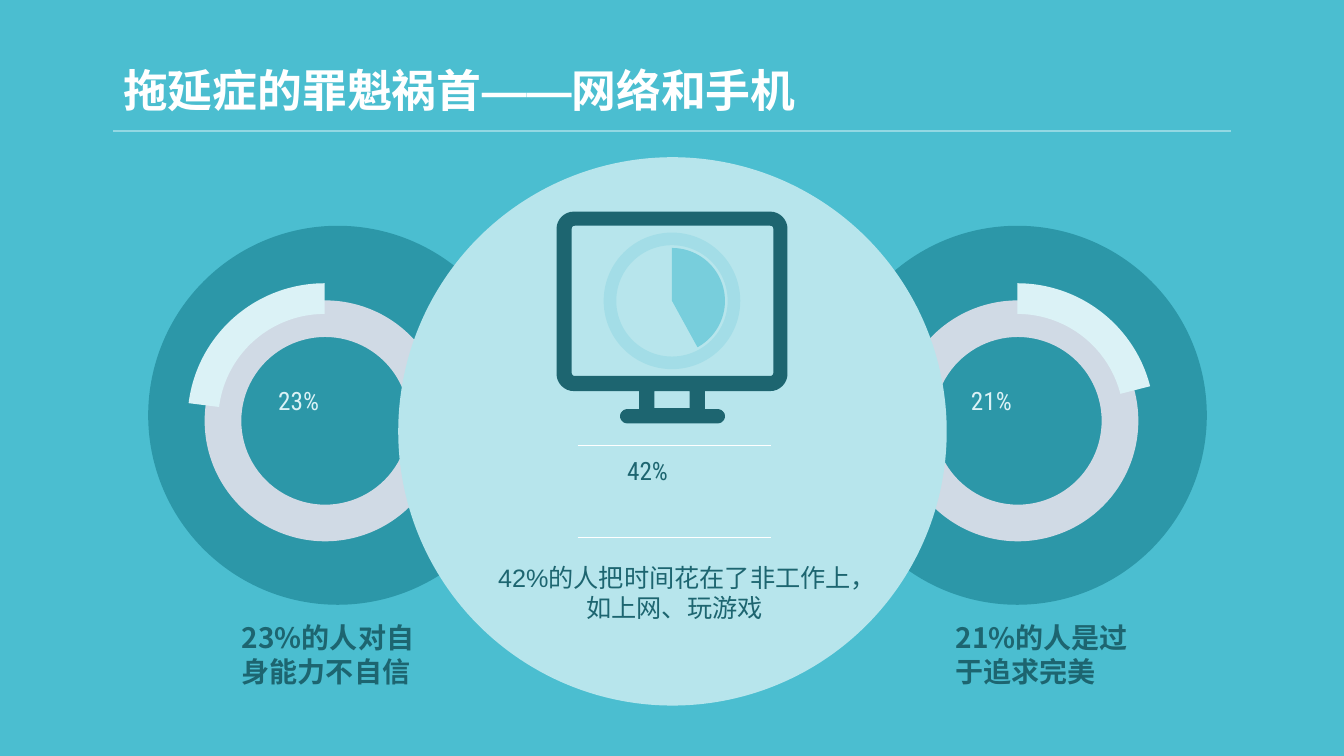
"""Build the slide on procrastination and its main causes."""
import math
from dataclasses import dataclass
from typing import Any

from lxml import etree
from pptx import Presentation
from pptx import util as u
from pptx.dml.color import RGBColor
from pptx.enum import shapes, text
from pptx.oxml.ns import qn

Kind = shapes.MSO_SHAPE
Align = text.PP_ALIGN
UNITS = 1000


@dataclass(frozen=True)
class Theme:
    back: str = "4BBED0"
    disc: str = "2C97A8"
    ring: str = "D0DAE5"
    arc: str = "DBF2F6"
    centre: str = "B7E5EC"
    dark: str = "1D6570"
    pie: str = "78CEDC"
    rule: str = "93D8E3"
    white: str = "FFFFFF"
    body_font: str = "Arial"
    number_font: str = "Roboto Condensed"
    caption_font: str = "Noto Sans CJK SC"
    title_size: int = 32
    caption_size: int = 20
    body_size: int = 18


@dataclass(frozen=True)
class Box:
    left: float
    top: float
    width: float
    height: float

    def emu(self) -> tuple[u.Length, ...]:
        return tuple(map(u.Inches, (self.left, self.top, self.width, self.height)))


@dataclass(frozen=True)
class Style:
    font: str
    size: int
    color: str
    bold: bool = False
    align: Any = Align.LEFT
    inset: float | None = None
    wrap: bool = True


@dataclass(frozen=True)
class Side:
    disc_left: float
    arc_left: float
    caption_left: float
    share: float
    caption: str
    flip: bool


@dataclass(frozen=True)
class Rule:
    left: float
    right: float
    y: float
    color: str


@dataclass(frozen=True)
class Corner:
    x: float
    y: float
    radius: float = 0


T = Theme()
TITLE = Style(T.body_font, T.title_size, T.white, bold=True)
BODY = Style(T.body_font, T.body_size, T.dark, align=Align.CENTER)
CAPTION = Style(T.caption_font, T.caption_size, T.dark, bold=True)
SIDE_NUMBER = Style(T.number_font, T.body_size, T.arc, inset=0, wrap=False)
CENTRE_NUMBER = Style(T.number_font, T.body_size, T.dark, inset=0, wrap=False)

SIDES = (
    Side(1.47, 1.86, 2.3, 0.23, "23%的人对自身能力不自信", True),
    Side(8.21, 8.73, 9.38, 0.21, "21%的人是过于追求完美", False),
)
RULES = (
    Rule(5.73, 7.65, 5.33, T.white),
    Rule(5.73, 7.65, 4.42, T.white),
    Rule(1.12, 12.21, 1.3, T.rule),
)
CENTRE_SHARE = 0.42
MONITOR = (
    Corner(5.52, 2.1, 0.17), Corner(7.81, 2.1, 0.17), Corner(7.81, 3.88, 0.17),
    Corner(6.99, 3.88), Corner(6.99, 4.06),
    Corner(7.19, 4.06, 0.07), Corner(7.19, 4.2, 0.07),
    Corner(6.15, 4.2, 0.07), Corner(6.15, 4.06, 0.07),
    Corner(6.34, 4.06), Corner(6.34, 3.88), Corner(5.52, 3.88, 0.17),
)
SCREEN = (Corner(5.67, 2.24, 0.03), Corner(5.67, 3.73, 0.03),
          Corner(7.67, 3.73, 0.03), Corner(7.67, 2.24, 0.03))
STAND_GAP = (Corner(6.49, 3.88), Corner(6.49, 4.05), Corner(6.84, 4.05), Corner(6.84, 3.88))


def share_angles(share: float) -> tuple[float, float]:
    """Give the clockwise start at the top and the end, as adjustments."""
    return 162, (162 + 216 * share) % 216


def paint(sp: Any, color: str) -> None:
    """Fill a shape plainly, with no outline or shadow."""
    sp.shadow.inherit = False
    sp.fill.solid()
    sp.fill.fore_color.rgb = RGBColor.from_string(color)
    sp.line.fill.background()


def add_shape(s: Any, kind: Any, box: Box, color: str,
              adjustments: tuple[float, ...] = (), flip: bool = False) -> Any:
    """Draw one preset shape."""
    sp = s.shapes.add_shape(kind, *box.emu())
    for i, value in enumerate(adjustments):
        sp.adjustments[i] = value
    if flip:
        sp._element.spPr.find(qn("a:xfrm")).set("flipH", "1")
    paint(sp, color)
    return sp


def set_text(sp: Any, words: str, style: Style) -> None:
    """Write one paragraph in a style."""
    tf = sp.text_frame
    frame = {"word_wrap": style.wrap, "auto_size": text.MSO_AUTO_SIZE.NONE,
             "vertical_anchor": text.MSO_ANCHOR.TOP}
    if style.inset is not None:
        frame |= {f"margin_{edge}": u.Inches(style.inset)
                  for edge in ("left", "top", "right", "bottom")}
    p = tf.paragraphs[0]
    r = p.add_run()
    r.text = words
    font = {"name": style.font, "size": u.Pt(style.size), "bold": style.bold}
    paragraph = {"alignment": style.align, "space_before": u.Pt(0)}
    for target, values in ((tf, frame), (p, paragraph), (r.font, font)):
        for name, value in values.items():
            setattr(target, name, value)
    r.font.color.rgb = RGBColor.from_string(style.color)
    latin = r._r.rPr.find(qn("a:latin"))
    east = etree.Element(qn("a:ea"), typeface=style.font)
    latin.addnext(east)


def add_text(s: Any, box: Box, words: str, style: Style) -> None:
    """Place a text box."""
    set_text(s.shapes.add_textbox(*box.emu()), words, style)


def add_rule(s: Any, rule: Rule) -> None:
    """Draw a thin horizontal line."""
    y = u.Inches(rule.y)
    line = s.shapes.add_connector(shapes.MSO_CONNECTOR.STRAIGHT,
                                  u.Inches(rule.left), y, u.Inches(rule.right), y)
    line.line.width = u.Pt(1)
    line.line.color.rgb = RGBColor.from_string(rule.color)
    etree.SubElement(line._element.spPr, qn("a:effectLst"))


def add_side(s: Any, side: Side) -> None:
    """Draw a disc with its ring, share arc, percentage and caption."""
    left = side.arc_left
    add_shape(s, Kind.OVAL, Box(side.disc_left, 2.24, 3.76, 3.76), T.disc)
    add_shape(s, Kind.DONUT, Box(left + 0.17, 2.98, 2.39, 2.39), T.ring, (0.152,), side.flip)
    add_shape(s, Kind.BLOCK_ARC, Box(left, 2.81, 2.72, 2.72), T.arc,
              (*share_angles(side.share), 0.112), side.flip)
    add_text(s, Box(left + 0.9, 3.82, 0.93, 0.7), f"{side.share:.0%}", SIDE_NUMBER)
    add_text(s, Box(side.caption_left, 6.11, 2.11, 0.77), side.caption, CAPTION)


def outline(corners: tuple[Corner, ...], steps: int = 8) -> list[tuple[float, float]]:
    """Trace right-angled corners, rounding each by its radius."""
    points = []
    for i, c in enumerate(corners):
        before, after = corners[i - 1], corners[(i + 1) % len(corners)]
        count = steps if c.radius else 0
        for k in range(count + 1):
            turn = math.pi / 2 * k / steps
            x, y = c.x, c.y
            for other, pull in ((before, 1 - math.sin(turn)), (after, 1 - math.cos(turn))):
                reach = c.radius * pull / math.dist((c.x, c.y), (other.x, other.y))
                x += (other.x - c.x) * reach
                y += (other.y - c.y) * reach
            points.append((x * UNITS, y * UNITS))
    return points


def add_monitor(s: Any) -> None:
    """Draw the computer monitor and the pie on its screen."""
    first, *rest = outline(MONITOR)
    builder = s.shapes.build_freeform(*first, scale=u.Inches(1) / UNITS)
    builder.add_line_segments(rest)
    for hole in (SCREEN, STAND_GAP):
        first, *rest = outline(hole)
        builder.move_to(*first)
        builder.add_line_segments(rest)
    paint(builder.convert_to_shape(), T.dark)
    ring = add_shape(s, Kind.OVAL, Box(6.05, 2.37, 1.23, 1.23), T.pie)
    ring.fill.background()
    ring.line.width = u.Pt(9)
    ring.line.color.rgb = RGBColor.from_string(T.pie)
    color = ring.line._ln.find(".//" + qn("a:srgbClr"))
    etree.SubElement(color, qn("a:alpha"), val="31000")
    add_shape(s, Kind.PIE, Box(6.14, 2.46, 1.05, 1.05), T.pie, share_angles(CENTRE_SHARE))


def main() -> None:
    """Build and save the slide."""
    prs = Presentation()
    prs.slide_width, prs.slide_height = u.Inches(13.33), u.Inches(7.5)
    s = prs.slides.add_slide(prs.slide_layouts[5])
    s.background.fill.solid()
    s.background.fill.fore_color.rgb = RGBColor.from_string(T.back)
    title = s.shapes.title
    title.left, title.top, title.width, title.height = Box(1.12, 0.57, 7.09, 0.64).emu()
    set_text(title, "拖延症的罪魁祸首——网络和手机", TITLE)
    for side in SIDES:
        add_side(s, side)
    add_shape(s, Kind.OVAL, Box(3.95, 1.56, 5.44, 5.44), T.centre)
    add_monitor(s)
    add_text(s, Box(6.22, 4.52, 0.94, 0.71), f"{CENTRE_SHARE:.0%}", CENTRE_NUMBER)
    add_text(s, Box(4.84, 5.53, 3.7, 0.71), "42%的人把时间花在了非工作上，如上网、玩游戏", BODY)
    for rule in RULES:
        add_rule(s, rule)
    prs.save("out.pptx")


if __name__ == "__main__":
    main()
